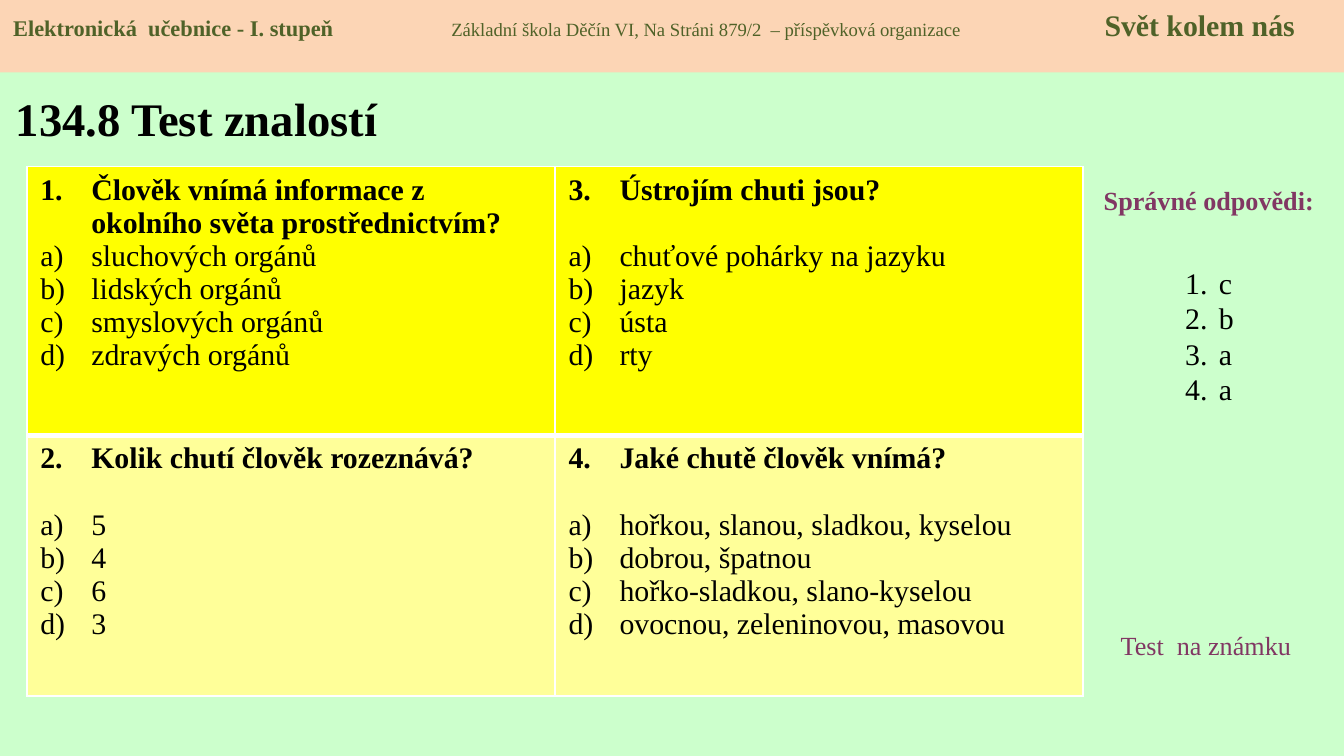
from lxml.etree import SubElement
from pptx import Presentation
from pptx.dml.color import RGBColor
from pptx.enum.shapes import MSO_SHAPE as Shape
from pptx.enum.text import MSO_ANCHOR as Anchor, PP_ALIGN as Align
from pptx.oxml.ns import qn
from pptx.util import Inches, Pt

MINT = RGBColor(0xCC, 0xFF, 0xCC)
PEACH = RGBColor(0xFC, 0xD5, 0xB5)
YELLOW = RGBColor(0xFF, 0xFF, 0x00)
PALE_YELLOW = RGBColor(0xFF, 0xFF, 0x99)
WHITE = RGBColor(0xFF, 0xFF, 0xFF)
BLACK = RGBColor(0x00, 0x00, 0x00)
PLUM = RGBColor(0x81, 0x37, 0x63)
GREEN = RGBColor(0x4F, 0x62, 0x28)


def add_text(para, text, size, color, bold=False):
    span = para.add_run()
    span.text = text
    span.font.color.rgb = color
    style = {"name": "Times New Roman", "size": Pt(size), "bold": bold}
    for name, value in style.items():
        setattr(span.font, name, value)


def number(para, scheme, indent, start=1):
    """Give the paragraph an automatic number with a hanging indent."""
    props = para._p.get_or_add_pPr()
    props.set("marL", str(Inches(indent)))
    props.set("indent", str(-Inches(indent)))
    bullet = SubElement(props, qn("a:buAutoNum"), type=scheme)
    if start > 1:
        bullet.set("startAt", str(start))


deck = Presentation()
deck.slide_width = Inches(10)
deck.slide_height = deck.slide_width * 9 // 16
slide = deck.slides.add_slide(deck.slide_layouts[6])
slide.background.fill.solid()
slide.background.fill.fore_color.rgb = MINT

# Title and captions
captions = [
    ("134.8 Test znalostí", (0.02, 0.55, 3.19, 0.65), 25, BLACK, True, Align.LEFT),
    ("Správné odpovědi:", (8.05, 1.32, 1.89, 0.34), 14, PLUM, True, Align.CENTER),
    ("Test  na známku", (8.24, 4.63, 1.57, 0.34), 14, PLUM, False, Align.LEFT),
]
for text, place, size, color, bold, align in captions:
    box = slide.shapes.add_textbox(*map(Inches, place))
    box.text_frame.word_wrap = True
    box.text_frame.vertical_anchor = Anchor.MIDDLE
    para = box.text_frame.paragraphs[0]
    para.alignment = align
    add_text(para, text, size, color, bold)

# Questions: number, wording, answers, gap in points before the answers
questions = [
    [
        (1, "Člověk vnímá informace z okolního světa prostřednictvím?",
         ["sluchových orgánů", "lidských orgánů", "smyslových orgánů",
          "zdravých orgánů"], 0),
        (3, "Ústrojím chuti jsou?",
         ["chuťové pohárky na jazyku", "jazyk", "ústa", "rty"], 17.7),
    ],
    [
        (2, "Kolik chutí člověk rozeznává?", ["5", "4", "6", "3"], 17.7),
        (4, "Jaké chutě člověk vnímá?",
         ["hořkou, slanou, sladkou, kyselou", "dobrou, špatnou",
          "hořko-sladkou, slano-kyselou", "ovocnou, zeleninovou, masovou"], 17.7),
    ],
]
row_formats = [(2, YELLOW, 3), (1.94, PALE_YELLOW, 1)]
table = slide.shapes.add_table(
    2, 2, Inches(0.2), Inches(1.24), Inches(7.86), Inches(3.94)).table
for row, (height, fill, bottom_width) in enumerate(row_formats):
    table.rows[row].height = Inches(height)
    for column, (start, question, answers, gap) in enumerate(questions[row]):
        cell = table.cell(row, column)
        para = cell.text_frame.paragraphs[0]
        para.space_after = Pt(gap)
        number(para, "arabicPeriod", 0.38, start)
        add_text(para, question, 16, BLACK, True)
        for answer in answers:
            para = cell.text_frame.add_paragraph()
            number(para, "alphaLcParenR", 0.38)
            add_text(para, answer, 16, BLACK)

        top_width = row_formats[row - 1][2] if row else 1
        widths = {"L": 1, "R": 1, "T": top_width, "B": bottom_width}
        props = cell._tc.get_or_add_tcPr()
        for side, width in widths.items():
            line = SubElement(props, qn(f"a:ln{side}"), w=str(Pt(width)))
            paint = SubElement(line, qn("a:solidFill"))
            SubElement(paint, qn("a:srgbClr"), val=str(WHITE))
        cell.fill.solid()
        cell.fill.fore_color.rgb = fill

# Correct answers
box = slide.shapes.add_textbox(Inches(8.72), Inches(1.92), Inches(0.55), Inches(1.72))
frame = box.text_frame
frame.word_wrap = True
for index, answer in enumerate("cbaa"):
    para = frame.add_paragraph() if index else frame.paragraphs[0]
    para.line_spacing = Pt(19)
    number(para, "arabicPeriod", 0.25)
    add_text(para, answer, 16, BLACK)

# Header band with tab stops between its three parts
band = slide.shapes.add_shape(Shape.RECTANGLE, 0, 0, Inches(10), Inches(0.54))
band.shadow.inherit = False
band.fill.solid()
band.fill.fore_color.rgb = PEACH
band.line.fill.background()
frame = band.text_frame
frame.word_wrap = True
frame.vertical_anchor = Anchor.TOP
para = frame.paragraphs[0]
para.alignment = Align.LEFT
tabs = SubElement(para._p.get_or_add_pPr(), qn("a:tabLst"))
for position in (3.26, 8.12):
    SubElement(tabs, qn("a:tab"), pos=str(Inches(position)), algn="l")
add_text(para, "Elektronická  učebnice - I. stupeň\t", 12, GREEN, True)
add_text(para, "Základní škola Děčín VI, Na Stráni 879/2  – příspěvková organizace\t",
         10, GREEN)
add_text(para, "Svět kolem nás", 16, GREEN, True)

deck.save("out.pptx")
